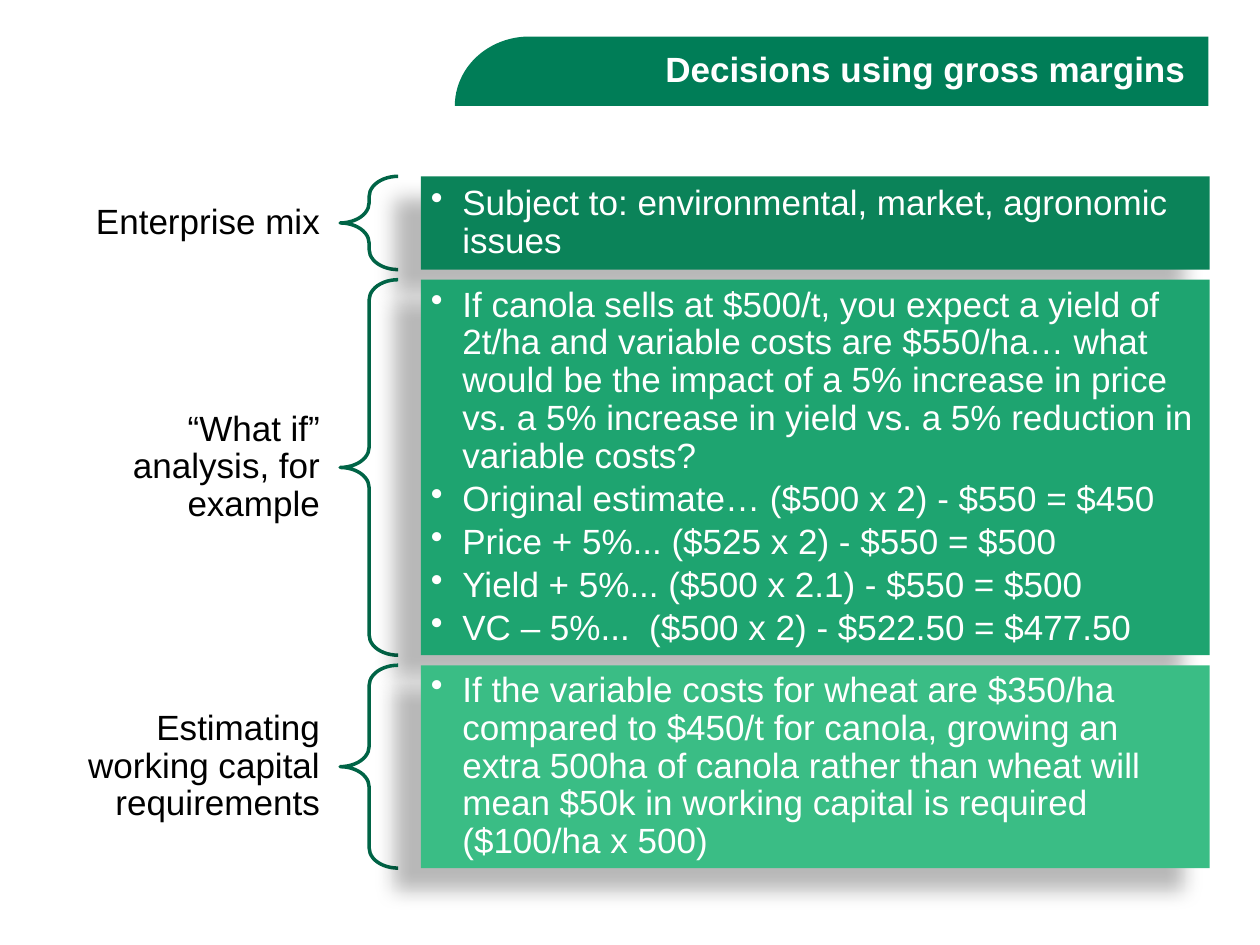
import math
from lxml import etree
from pptx import Presentation
from pptx.dml.color import RGBColor
from pptx.enum.shapes import MSO_SHAPE
from pptx.enum.text import MSO_ANCHOR, PP_ALIGN
from pptx.oxml.ns import qn
from pptx.util import Inches, Pt

RECT, BRACE = MSO_SHAPE.RECTANGLE, MSO_SHAPE.LEFT_BRACE
MIDDLE = MSO_ANCHOR.MIDDLE
LEFT, RIGHT = PP_ALIGN.LEFT, PP_ALIGN.RIGHT

ROWS = [
    ("Enterprise mix", 0.74, "0B8359",
     ["Subject to: environmental, market, agronomic issues"]),
    ("“What if” analysis, for example", 2.98, "1EA470",
     ["If canola sells at $500/t, you expect a yield of 2t/ha and variable "
      "costs are $550/ha… what would be the impact of a 5% increase in price "
      "vs. a 5% increase in yield vs. a 5% reduction in variable costs?",
      "Original estimate… ($500 x 2) - $550 = $450",
      "Price + 5%... ($525 x 2) - $550 = $500",
      "Yield + 5%... ($500 x 2.1) - $550 = $500",
      "VC – 5%...  ($500 x 2) - $522.50 = $477.50"]),
    ("Estimating working capital requirements", 1.61, "3ABD85",
     ["If the variable costs for wheat are $350/ha compared to $450/t for "
      "canola, growing an extra 500ha of canola rather than wheat will mean "
      "$50k in working capital is required ($100/ha x 500)"]),
]


def color(code):
    return RGBColor.from_string(code)


def paint(shape, code):
    shape.shadow.inherit = False
    shape.fill.solid()
    shape.fill.fore_color.rgb = color(code)
    shape.line.fill.background()


def cast(shape):
    """Soft shadow down and to the left."""
    effects = shape._element.spPr.find(qn("a:effectLst"))
    shade = etree.SubElement(
        effects, qn("a:outerShdw"), blurRad=str(Pt(11.8)),
        dist=str(Pt(19.7)), dir=str(141 * 60000), algn="ctr", rotWithShape="0")
    black = etree.SubElement(shade, qn("a:srgbClr"), val="000000")
    etree.SubElement(black, qn("a:alpha"), val="28000")


def write(shape, lines, code, align, side, edge, bold=False, bullet=False, space=0.9):
    frame = shape.text_frame
    frame.word_wrap = True
    frame.vertical_anchor = MIDDLE
    frame.margin_left = frame.margin_right = Inches(side)
    frame.margin_top = frame.margin_bottom = Inches(edge)
    for i, line in enumerate(lines):
        para = frame.paragraphs[0] if i == 0 else frame.add_paragraph()
        para.text = line
        if bullet:
            props = para._p.get_or_add_pPr()
            props.set("marL", str(Inches(0.25)))
            props.set("indent", str(-Inches(0.25)))
            etree.SubElement(props, qn("a:buChar"), char="•")
            para.space_after = Pt(3)
        para.alignment = align
        para.line_spacing = space
        font = para.font
        font.name, font.size, font.bold = "Arial", Pt(20), bold
        font.color.rgb = color(code)


def add_banner(slide, left, top, width, height):
    # Bar with one rounded corner
    curve, steps = 0.59, 24
    arc = []
    for i in range(steps + 1):
        turn = math.pi / 2 * i / steps
        arc.append((Inches(left + curve * (1 - math.cos(turn))),
                    Inches(top + height * (1 - math.sin(turn)))))
    right, base = Inches(left + width), Inches(top + height)
    pen = slide.shapes.build_freeform(*arc[0])
    pen.add_line_segments(arc[1:] + [(right, Inches(top)), (right, base)])
    paint(pen.convert_to_shape(), "007D57")

    # Title
    title = slide.shapes.add_textbox(
        Inches(left + 0.6), Inches(top + 0.02), Inches(width - 0.78), Inches(0.47))
    write(title, ["Decisions using gross margins"], "FFFFFF", RIGHT, 0, 0.05,
          bold=True, space=1)


def add_row(slide, left, top, width, height, label, fill, points):
    shapes = slide.shapes
    y, tall = Inches(top), Inches(height)

    # Label
    name = shapes.add_textbox(Inches(left), y, Inches(2.3), tall)
    write(name, [label], "000000", RIGHT, 0.16, 0.06)

    # Brace
    brace = shapes.add_shape(BRACE, Inches(left + 2.3), y, Inches(0.46), tall)
    brace.shadow.inherit = False
    brace.adjustments[0] = 0.35
    brace.adjustments[1] = 0.5
    brace.fill.background()
    brace.line.color.rgb = color("006446")
    brace.line.width = Pt(2)

    # Panel
    panel = shapes.add_shape(
        RECT, Inches(left + 2.94), y, Inches(width - 2.94), tall)
    paint(panel, fill)
    cast(panel)
    write(panel, points, "FFFFFF", LEFT, 0.08, 0.08, bullet=True)


def main():
    deck = Presentation()
    deck.slide_width, deck.slide_height = Inches(10), Inches(7.5)
    slide = deck.slides.add_slide(deck.slide_layouts[6])
    add_banner(slide, 3.61, 0.29, 5.98, 0.55)
    top, gap = 1.4, 0.08
    for label, height, fill, points in ROWS:
        add_row(slide, 0.4, top, 9.2, height, label, fill, points)
        top += height + gap
    deck.save("out.pptx")


if __name__ == "__main__":
    main()
